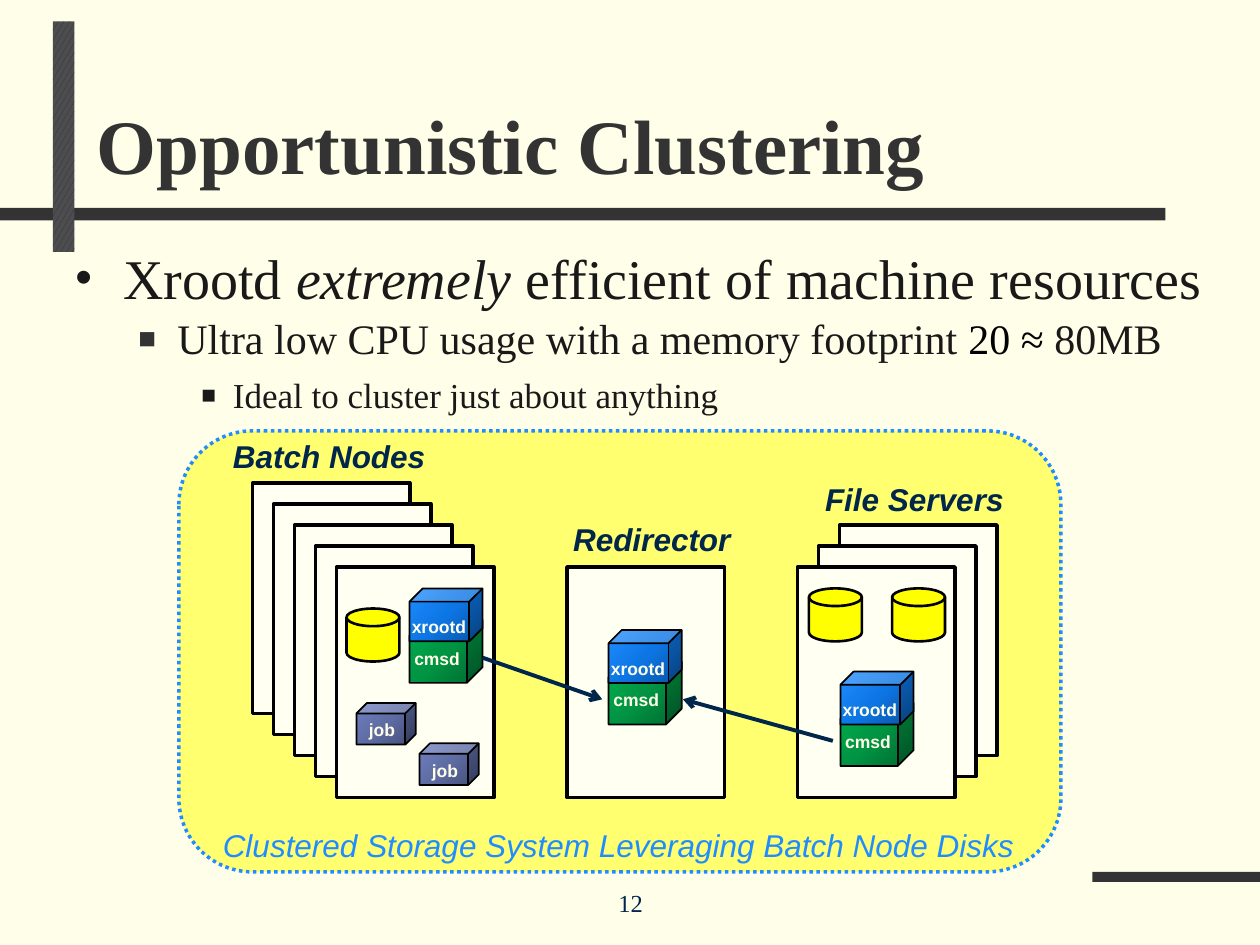
import copy

import pptx
import pptx.dml.color
import pptx.enum.dml
import pptx.enum.shapes
import pptx.enum.text
import pptx.oxml.ns
import pptx.util
from lxml import etree

Inches = pptx.util.Inches
Pt = pptx.util.Pt
RGBColor = pptx.dml.color.RGBColor
SHAPE = pptx.enum.shapes.MSO_SHAPE
ANCHOR = pptx.enum.text.MSO_ANCHOR
qn = pptx.oxml.ns.qn

CREAM = RGBColor(0xFF, 0xFF, 0xE9)
IVORY = RGBColor(0xFF, 0xFF, 0xF2)
PALE_YELLOW = RGBColor(0xFF, 0xFF, 0x6F)
YELLOW = RGBColor(0xFF, 0xFF, 0x00)
BLACK = RGBColor(0x00, 0x00, 0x00)
INK = RGBColor(0x19, 0x19, 0x19)
CHARCOAL = RGBColor(0x33, 0x33, 0x33)
GRAY = RGBColor(0x4D, 0x4D, 0x4D)
SLATE = RGBColor(0x26, 0x2D, 0x4C)
NAVY = RGBColor(0x00, 0x26, 0x4C)
BLUE = RGBColor(0x20, 0x8C, 0xFF)
GREENS = (RGBColor(0x00, 0x68, 0x2F), RGBColor(0x00, 0x94, 0x43), RGBColor(0x00, 0xB0, 0x50))
BLUES = (RGBColor(0x09, 0x53, 0xA1), RGBColor(0x0D, 0x76, 0xE5), BLUE)
PURPLES = (RGBColor(0x42, 0x4C, 0x73), RGBColor(0x5E, 0x6C, 0xA3), RGBColor(0x70, 0x80, 0xC1))
SERIF = "Times New Roman"
SANS = "Arial"
STEP = 1 / 6


def add_shape(slide, kind, left, top, width, height, fill=None, line=None, line_width=1):
    """Add a preset shape without a shadow."""
    shape = slide.shapes.add_shape(kind, Inches(left), Inches(top), Inches(width), Inches(height))
    shape.shadow.inherit = False
    if fill is not None:
        shape.fill.solid()
        shape.fill.fore_color.rgb = fill
    if line is None:
        shape.line.fill.background()
    else:
        shape.line.color.rgb = line
        shape.line.width = Pt(line_width)
    return shape


def format_run(run, size, name, color, bold=False, italic=False):
    """Set the font of one run."""
    run.font.size = Pt(size)
    run.font.name = name
    run.font.color.rgb = color
    run.font.bold = bold
    run.font.italic = italic


def add_text(slide, text, left, top, width, height, size, name, color,
             bold=False, italic=False, wrap=True, anchor=ANCHOR.TOP):
    """Add a one-paragraph text box."""
    box = slide.shapes.add_textbox(Inches(left), Inches(top), Inches(width), Inches(height))
    frame = box.text_frame
    frame.text = text
    frame.word_wrap = wrap
    frame.vertical_anchor = anchor
    format_run(frame.paragraphs[0].runs[0], size, name, color, bold, italic)
    return box


def add_cube(slide, left, top, width, height, colors):
    """Add a cube shaded from its lower right to its upper left corner."""
    cube = add_shape(slide, SHAPE.CUBE, left, top, width, height, line=BLACK)
    cube.fill.gradient()
    cube.fill.gradient_angle = 135
    stop_list = next(cube._element.iter(qn("a:gsLst")))
    stop_list.insert(1, copy.deepcopy(stop_list[0]))
    for stop, color, position in zip(cube.fill.gradient_stops, colors, (0, 0.5, 1)):
        stop.color.rgb = color
        stop.position = position


def add_cube_label(slide, text, left, top, width):
    """Add the small white caption on the front of a cube."""
    add_text(slide, text, left, top, width, 0.27, 10, SANS, CREAM, bold=True)


def add_daemons(slide, left, top):
    """Add an xrootd cube stacked on a cmsd cube."""
    add_cube(slide, left, top + 0.25, 0.58, 0.5, GREENS)
    add_cube(slide, left, top, 0.58, 0.42, BLUES)
    add_cube_label(slide, "cmsd", left - 0.06, top + 0.42, 0.64)
    add_cube_label(slide, "xrootd", left - 0.08, top + 0.17, 0.64)


def add_job(slide, left, top):
    """Add a job cube with its caption."""
    add_cube(slide, left, top, 0.47, 0.33, PURPLES)
    add_cube_label(slide, "job", left, top + 0.08, 0.5)


def add_machines(slide, left, count, direction):
    """Add a stack of machines whose front one stands at left."""
    for depth in reversed(range(count)):
        offset = depth * STEP
        add_shape(slide, SHAPE.RECTANGLE, left + direction * offset, 4.5 - offset,
                  1.25, 1.83, IVORY, BLACK, 2)


def add_disk(slide, left, top):
    """Add a disk symbol."""
    add_shape(slide, SHAPE.FLOWCHART_MAGNETIC_DISK, left, top, 0.42, 0.42, YELLOW, BLACK, 1.5)


def add_arrow(slide, start, end):
    """Add a straight line with an open arrowhead at its end."""
    points = [Inches(value) for value in (*start, *end)]
    arrow = slide.shapes.add_connector(pptx.enum.shapes.MSO_CONNECTOR.STRAIGHT, *points)
    arrow.line.color.rgb = NAVY
    arrow.line.width = Pt(2.25)
    etree.SubElement(arrow.line._get_or_add_ln(), qn("a:tailEnd"), type="arrow")
    etree.SubElement(arrow._element.spPr, qn("a:effectLst"))


def add_bullet(paragraph, level, margin, indent, mark, size, color, pieces):
    """Fill a bulleted paragraph with (text, colour, italic) pieces."""
    paragraph.level = level
    paragraph.line_spacing = Pt(30)
    properties = paragraph._p.get_or_add_pPr()
    properties.set("marL", str(Inches(margin)))
    properties.set("indent", str(Inches(-indent)))
    bullet_color = etree.SubElement(properties, qn("a:buClr"))
    etree.SubElement(bullet_color, qn("a:srgbClr"), val=str(color))
    etree.SubElement(properties, qn("a:buSzPct"), val="70000" if level else "85000")
    etree.SubElement(properties, qn("a:buFont"), typeface=SANS)
    etree.SubElement(properties, qn("a:buChar"), char=mark)
    for text, text_color, italic in pieces:
        run = paragraph.add_run()
        run.text = text
        format_run(run, size, SERIF, text_color, italic=italic)


def add_frame(slide):
    """Add the bars, the title and the slide number."""
    add_shape(slide, SHAPE.RECTANGLE, 0, 1.65, 9.25, 0.1, CHARCOAL)
    add_shape(slide, SHAPE.RECTANGLE, 8.67, 6.92, 1.33, 0.08, CHARCOAL)
    post = add_shape(slide, SHAPE.RECTANGLE, 0.42, 0.17, 0.17, 1.83)
    post.fill.patterned()
    post.fill.pattern = pptx.enum.dml.MSO_PATTERN.LARGE_CONFETTI
    post.fill.fore_color.rgb = SLATE
    post.fill.back_color.rgb = GRAY
    add_text(slide, "Opportunistic Clustering", 0.67, 0.31, 8.36, 1.25, 44, SERIF, CHARCOAL,
             bold=True, anchor=ANCHOR.BOTTOM)
    number = add_text(slide, "12", 3.42, 7.08, 3.17, 0.25, 14, SERIF, NAVY, anchor=ANCHOR.BOTTOM)
    number.text_frame.paragraphs[0].alignment = pptx.enum.text.PP_ALIGN.CENTER


def add_body(slide):
    """Add the three bullet levels."""
    box = slide.shapes.add_textbox(Inches(0.5), Inches(2), Inches(9.17), Inches(1.58))
    frame = box.text_frame
    frame.word_wrap = True
    add_bullet(frame.paragraphs[0], 0, 0.38, 0.38, "•", 32, INK, [
        ("Xrootd ", INK, False), ("extremely", INK, True),
        (" efficient of machine resources", INK, False)])
    add_bullet(frame.add_paragraph(), 1, 0.81, 0.31, "■", 24, CHARCOAL, [
        ("Ultra low CPU usage with a memory footprint ", INK, False),
        ("20 ≈ ", BLACK, False), ("80MB", INK, False)])
    add_bullet(frame.add_paragraph(), 2, 1.25, 0.25, "■", 20, INK, [
        ("Ideal to cluster just about anything", INK, False)])


def add_cluster(slide):
    """Add the diagram of the clustered storage system."""
    panel = add_shape(slide, SHAPE.ROUNDED_RECTANGLE, 1.42, 3.42, 7, 3.5, PALE_YELLOW, BLUE, 2)
    panel.line.dash_style = pptx.enum.dml.MSO_LINE.ROUND_DOT
    add_text(slide, "Clustered Storage System Leveraging Batch Node Disks", 1.67, 6.51, 6.54, 0.4,
             18, SANS, BLUE, italic=True, wrap=False)
    for left, count, direction in ((2.67, 5, -1), (4.5, 1, 1), (6.33, 3, 1)):
        add_machines(slide, left, count, direction)
    for left, top in ((2.75, 4.83), (6.42, 4.67), (7.08, 4.67)):
        add_disk(slide, left, top)
    for left, top in ((3.25, 4.67), (4.83, 5), (6.67, 5.33)):
        add_daemons(slide, left, top)
    for left, top in ((3.33, 5.9), (2.83, 5.58)):
        add_job(slide, left, top)
    for text, left, top, width in (("Batch Nodes", 1.75, 3.42, 1.74),
                                   ("File Servers", 6.45, 3.76, 1.63),
                                   ("Redirector", 4.45, 4.08, 1.46)):
        add_text(slide, text, left, top, width, 0.4, 18, SANS, NAVY, True, True, wrap=False)
    add_arrow(slide, (3.83, 5.22), (4.78, 5.55))
    add_arrow(slide, (6.61, 5.88), (5.42, 5.55))


def main():
    """Build and save the slide."""
    presentation = pptx.Presentation()
    presentation.slide_width = Inches(10)
    presentation.slide_height = Inches(7.5)
    slide = presentation.slides.add_slide(presentation.slide_layouts[6])
    slide.background.fill.solid()
    slide.background.fill.fore_color.rgb = CREAM
    add_frame(slide)
    add_cluster(slide)
    add_body(slide)
    presentation.save("out.pptx")


if __name__ == "__main__":
    main()
